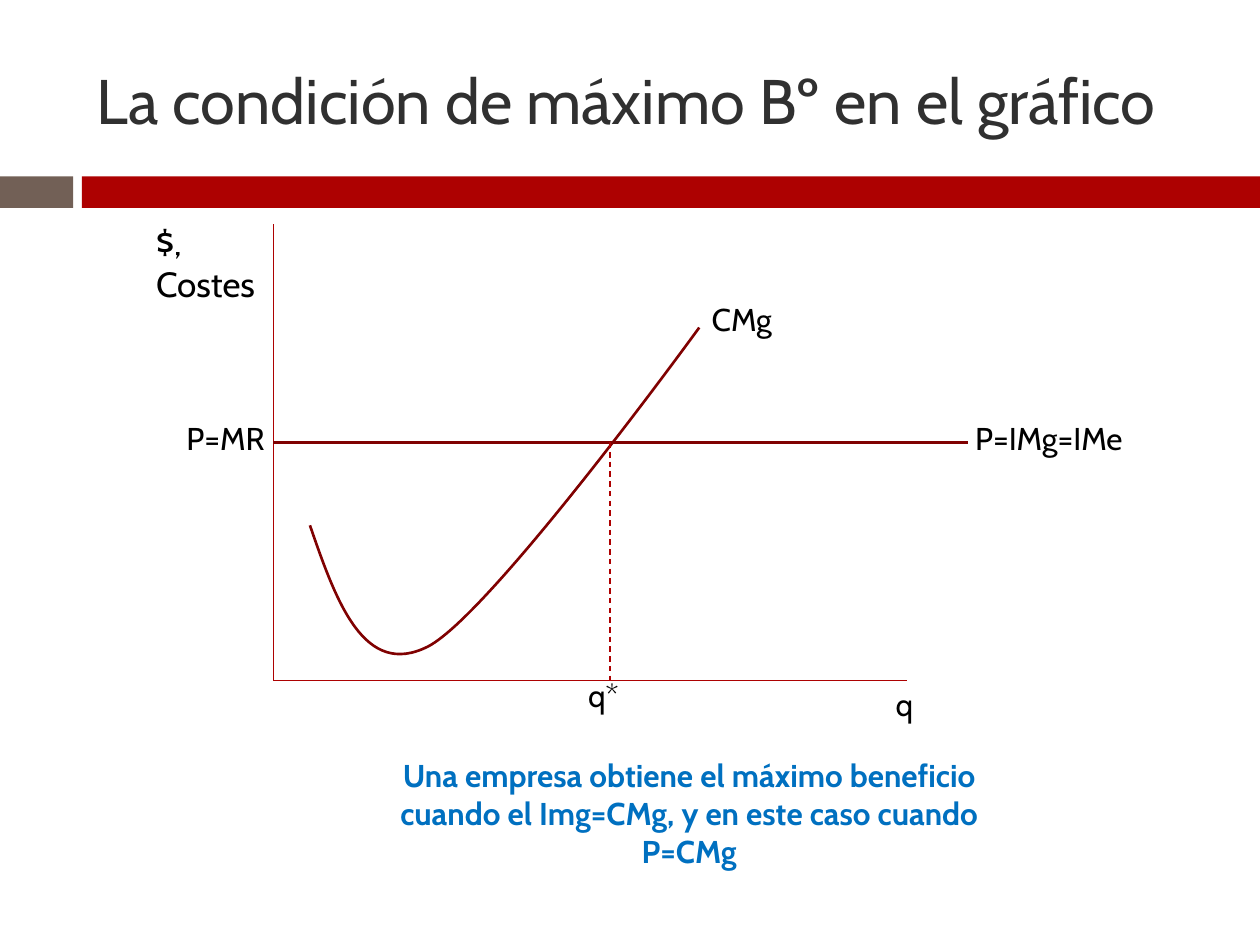
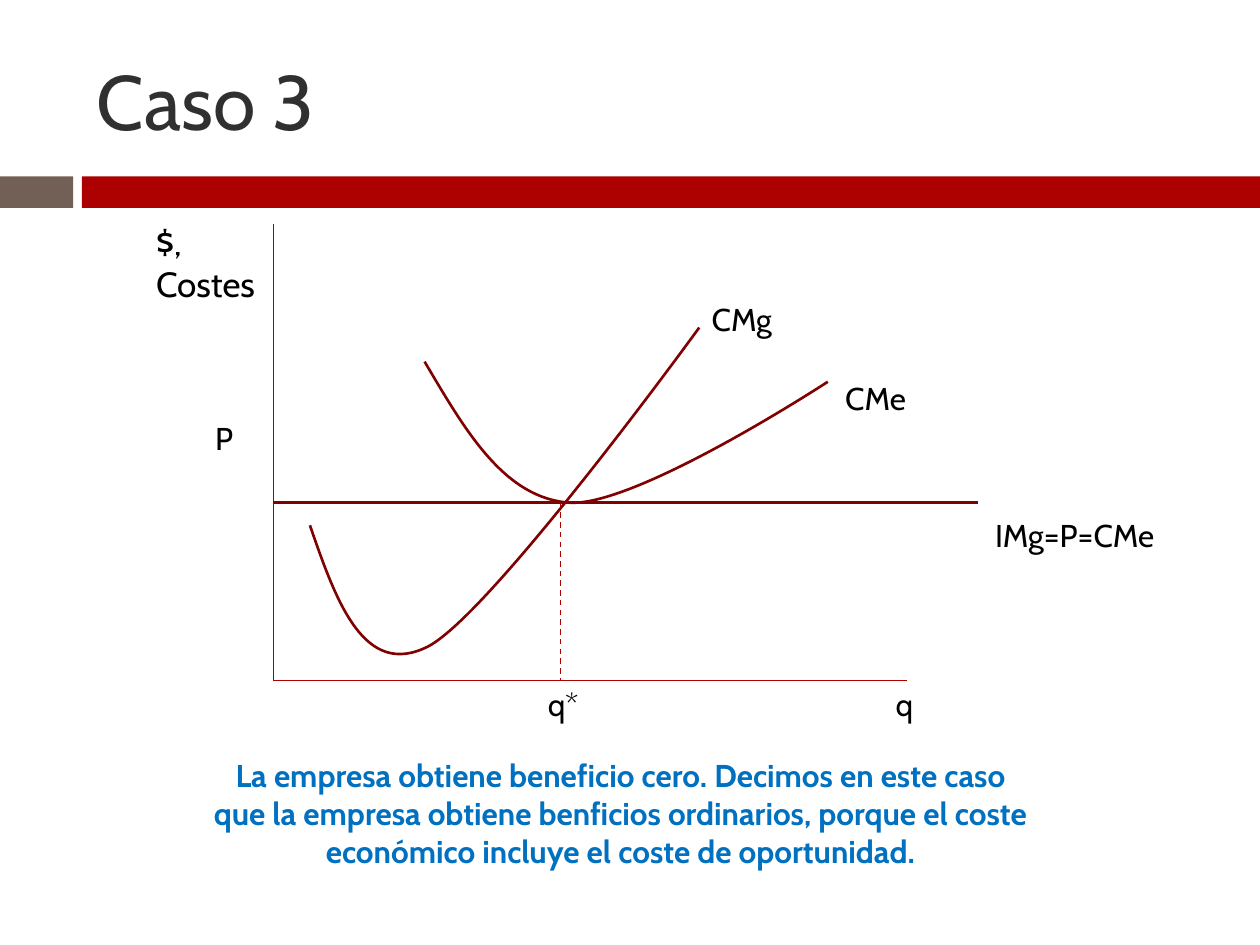
from pptx import Presentation
from pptx.dml.color import RGBColor
from pptx.enum.dml import MSO_LINE
from pptx.enum.shapes import MSO_CONNECTOR, MSO_SHAPE
from pptx.enum.text import MSO_ANCHOR, PP_ALIGN
from pptx.oxml.ns import qn
from pptx.util import Inches, Pt
from lxml import etree

STRAIGHT = MSO_CONNECTOR.STRAIGHT
RECTANGLE = MSO_SHAPE.RECTANGLE
DASH = MSO_LINE.DASH
MIDDLE, TOP = MSO_ANCHOR.MIDDLE, MSO_ANCHOR.TOP
CENTER, LEFT = PP_ALIGN.CENTER, PP_ALIGN.LEFT

# Shared look
FONT = "Cabin"
RED, DARK_RED, BROWN = "AD0101", "800101", "726056"
TITLE_GREY, BLACK, BLUE = "303030", "000000", "0070C0"
THIN, THICK = 0.79, 1.5

# Shared axes, in inches
AXIS_X, AXIS_Y = 2.17, 5.4
AXIS_TOP, AXIS_RIGHT = 1.78, 7.2

# Cost curves: start, then (control, control, end) for each Bézier piece
MARGINAL_COST = ((2.46, 4.17), [((2.67, 4.78), (2.89, 5.39), (3.4, 5.13)),
                                ((3.91, 4.86), (5.55, 2.6), (5.55, 2.6))])
AVERAGE_COST = ((3.37, 2.87), [((3.69, 3.41), (4, 3.96), (4.53, 3.99)),
                               ((5.07, 4.01), (6.57, 3.03), (6.57, 3.03))])


def rgb(hex_color):
    return RGBColor.from_string(hex_color)


def add_text(slide, text, box, size=18, color=BLACK, bold=False,
             align=LEFT, anchor=TOP, space_before=0):
    frame = slide.shapes.add_textbox(*map(Inches, box)).text_frame
    frame.word_wrap = True
    frame.vertical_anchor = anchor
    paragraph = frame.paragraphs[0]
    paragraph.alignment = align
    paragraph.space_before = Pt(space_before)
    run = paragraph.add_run()
    run.text = text
    formats = {"name": FONT, "size": Pt(size), "bold": bold}
    for attribute, value in formats.items():
        setattr(run.font, attribute, value)
    run.font.color.rgb = rgb(color)


def add_line(slide, start, end, color=RED, width=THIN, dash=None):
    line = slide.shapes.add_connector(STRAIGHT, *map(Inches, start + end))
    line.line.color.rgb = rgb(color)
    line.line.width = Pt(width)
    if dash:
        line.line.dash_style = dash
    etree.SubElement(line._element.spPr, qn("a:effectLst"))


def add_curve(slide, curve):
    """Draw the knots as a freeform, then bend each segment into a Bézier."""
    start, pieces = curve
    builder = slide.shapes.build_freeform(*map(Inches, start))
    knots = [tuple(map(Inches, piece[-1])) for piece in pieces]
    builder.add_line_segments(knots, close=False)
    shape = builder.convert_to_shape()
    shape.shadow.inherit = False
    shape.fill.background()
    shape.line.color.rgb = rgb(DARK_RED)
    shape.line.width = Pt(THICK)
    segments = list(shape._element.iter(qn("a:lnTo")))
    for segment, piece in zip(segments, pieces):
        bend = etree.Element(qn("a:cubicBezTo"))
        for x, y in piece:
            etree.SubElement(bend, qn("a:pt"), x=str(Inches(x) - shape.left),
                             y=str(Inches(y) - shape.top))
        segment.getparent().replace(segment, bend)


def add_band(slide, left, width, color):
    band = slide.shapes.add_shape(
        RECTANGLE, *map(Inches, (left, 1.4, width, 0.25)))
    band.shadow.inherit = False
    band.fill.solid()
    band.fill.fore_color.rgb = rgb(color)
    band.line.fill.background()


def add_chart_slide(prs, title, title_size):
    """Start a slide with what all share: bands, title, axes and the CMg curve."""
    slide = prs.slides.add_slide(prs.slide_layouts[6])
    add_band(slide, 0, 0.58, BROWN)
    add_band(slide, 0.65, 9.35, RED)
    add_text(slide, title, (0.67, 0.25, 8.92, 1.08), title_size, TITLE_GREY,
             anchor=MIDDLE)
    add_line(slide, (AXIS_X, AXIS_TOP), (AXIS_X, AXIS_Y))
    add_line(slide, (AXIS_X, AXIS_Y), (AXIS_RIGHT, AXIS_Y))
    add_text(slide, "$, Costes", (1.14, 1.7, 1.1, 0.77), 20, space_before=7)
    add_label(slide, "q", 7.01, 5.39)
    add_curve(slide, MARGINAL_COST)
    add_label(slide, "CMg", 5.55, 2.33)
    return slide


def add_label(slide, text, left, top, width=1.06):
    add_text(slide, text, (left, top, width, 0.4))


def add_equilibrium(slide, quantity, price, price_end):
    """Price line and the dashed drop to the optimal quantity."""
    add_line(slide, (price_end, price), (AXIS_X, price), DARK_RED, THICK)
    add_line(slide, (quantity, price), (quantity, AXIS_Y), dash=DASH)


def add_conclusion(slide, text, left, width):
    add_text(slide, text, (left, 5.95, width, 1.01), color=BLUE, bold=True,
             align=CENTER)


def main():
    prs = Presentation()
    prs.slide_width, prs.slide_height = Inches(10), Inches(7.5)

    # Maximum profit condition
    condition = add_chart_slide(
        prs, "La condición de máximo Bº en el gráfico", 36)
    add_equilibrium(condition, quantity=4.84, price=3.51, price_end=7.68)
    add_label(condition, "P=MR", 1.38, 3.28, 0.85)
    add_label(condition, "P=IMg=IMe", 7.64, 3.28, 1.69)
    add_label(condition, "q*", 4.57, 5.32)
    add_conclusion(
        condition,
        "Una empresa obtiene el máximo beneficio cuando el Img=CMg, "
        "y en este caso cuando P=CMg", 2.95, 5.04)

    # Case 3: zero profit
    zero_profit = add_chart_slide(prs, "Caso 3", 44)
    add_curve(zero_profit, AVERAGE_COST)
    add_label(zero_profit, "CMe", 6.61, 2.96)
    add_equilibrium(zero_profit, quantity=4.45, price=3.99, price_end=7.76)
    add_label(zero_profit, "P", 1.61, 3.28, 0.85)
    add_label(zero_profit, "IMg=P=CMe", 7.8, 4.05, 1.54)
    add_label(zero_profit, "q*", 4.25, 5.39, 0.67)
    add_conclusion(
        zero_profit,
        "La empresa obtiene beneficio cero. Decimos en este caso que la "
        "empresa obtiene benficios ordinarios, porque el coste económico "
        "incluye el coste de oportunidad.", 1.54, 6.77)

    prs.save("out.pptx")


if __name__ == "__main__":
    main()
